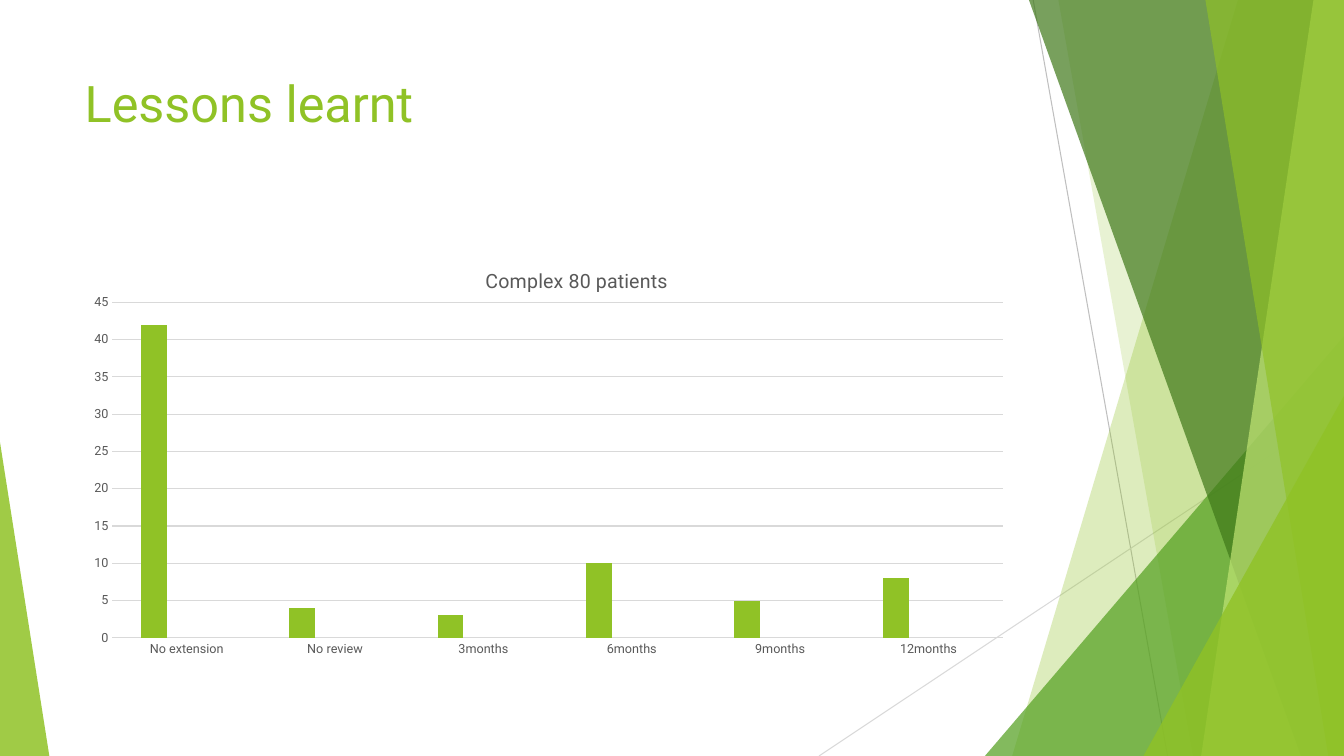
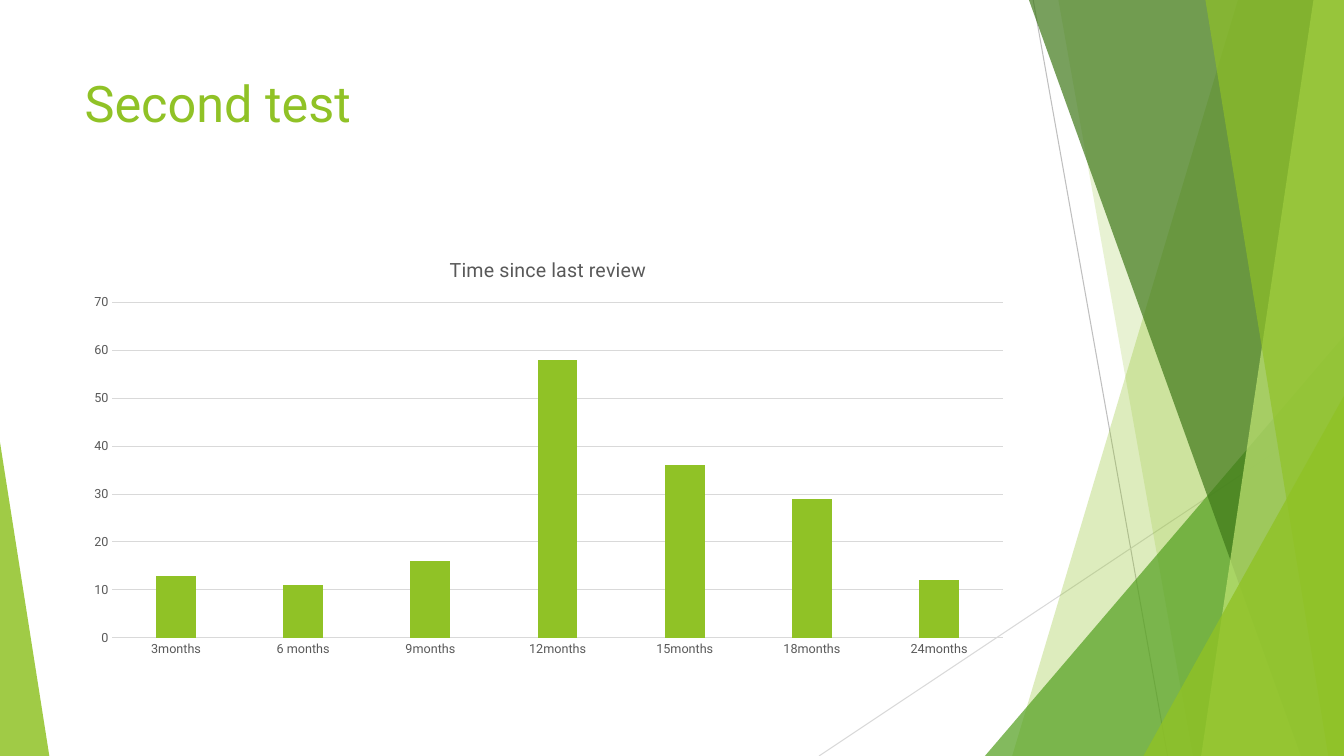
from lxml.etree import Element, SubElement
from pptx import Presentation
from pptx.chart.data import CategoryChartData
from pptx.dml.color import RGBColor
from pptx.enum.chart import XL_CHART_TYPE, XL_TICK_MARK
from pptx.enum.shapes import MSO_CONNECTOR, MSO_SHAPE
from pptx.enum.text import MSO_ANCHOR, PP_ALIGN
from pptx.oxml.ns import qn
from pptx.util import Pt

PX = 9525  # EMU in one px, 96 px to the inch
WIDTH, HEIGHT = 1280, 720
FONT = "Roboto"
COLORS = {
    "lime": "90C226",
    "green": "54A021",
    "forest": "3F7819",
    "pale": "C0E474",
    "gold": "E6B91E",
    "text": "595959",
    "grid": "D9D9D9",
    "thread": "BFBFBF",
}
SERIES_COLORS = ["lime", "green", "gold"]

TITLE_BOX = (71, 64, 902, 138)
CHART_BOX = (71, 227, 902, 407)
PLOT_AREA = {"x": 0.04, "y": 0.15, "w": 0.94, "h": 0.785}

# Thin lines: start x, start y, end x, end y, color
THREADS = [(984, 0, 1112, HEIGHT, "thread"), (WIDTH, 387, 780, HEIGHT, "grid")]
# Facets reach the right edge. Panel: top x, bottom x; wedge: left, top
FACETS = [
    ("panel", 1179, 964, "lime", 30),
    ("panel", 1008, 1136, "lime", 20),
    ("wedge", 938, 320, "green", 72),
    ("panel", 980, 1239, "forest", 70),
    ("panel", 1251, 1144, "pale", 70),
    ("panel", 1148, 1265, "lime", 65),
    ("wedge", 1089, 377, "lime", 80),
]


def rgb(name):
    return RGBColor.from_string(COLORS[name])


def emu(box):
    return [value * PX for value in box]


def style_font(font, size, color):
    font.name = FONT
    font.size = Pt(size)
    font.bold = False
    font.color.rgb = rgb(color)


def style_line(line, color):
    line.color.rgb = rgb(color)
    line.width = Pt(0.75)


def fill_facet(shape, color, opacity):
    shape.shadow.inherit = False
    shape.line.fill.background()
    shape.fill.solid()
    shape.fill.fore_color.rgb = rgb(color)
    color_element = shape.fill._xPr.find(qn("a:solidFill"))[0]
    SubElement(color_element, qn("a:alpha"), val=str(opacity * 1000))


def add_thread(slide, start_x, start_y, end_x, end_y, color):
    ends = emu((start_x, start_y, end_x, end_y))
    thread = slide.shapes.add_connector(MSO_CONNECTOR.STRAIGHT, *ends)
    style_line(thread.line, color)
    SubElement(thread._element.spPr, qn("a:effectLst"))


def add_panel(slide, top_x, bottom_x, color, opacity):
    builder = slide.shapes.build_freeform(top_x, 0, scale=PX)
    builder.add_line_segments([(WIDTH, 0), (WIDTH, HEIGHT), (bottom_x, HEIGHT)])
    fill_facet(builder.convert_to_shape(), color, opacity)


def add_wedge(slide, left, top, color, opacity, right=WIDTH, apex=1):
    box = emu((left, top, right - left, HEIGHT - top))
    wedge = slide.shapes.add_shape(MSO_SHAPE.ISOSCELES_TRIANGLE, *box)
    wedge.adjustments[0] = apex
    fill_facet(wedge, color, opacity)


def add_backdrop(slide):
    """Overlapping facets on the right and one wedge on the left."""
    for thread in THREADS:
        add_thread(slide, *thread)
    for kind, *facet in FACETS:
        add_facet = add_panel if kind == "panel" else add_wedge
        add_facet(slide, *facet)
    add_wedge(slide, 0, 421, "lime", 85, right=47, apex=0)


def add_title(slide, text, box):
    title = slide.shapes.title
    title.left, title.top, title.width, title.height = emu(box)
    text_frame = title.text_frame
    text_frame.text = text
    text_frame.vertical_anchor = MSO_ANCHOR.TOP
    paragraph = text_frame.paragraphs[0]
    paragraph.alignment = PP_ALIGN.LEFT
    style_font(paragraph.runs[0].font, 36, "lime")


def set_layout(element, index, fractions, inner=False):
    """Fix a chart part at fractions of the chart's size."""
    for old_layout in element.findall(qn("c:layout")):
        element.remove(old_layout)
    layout = Element(qn("c:layout"))
    manual = SubElement(layout, qn("c:manualLayout"))
    if inner:
        SubElement(manual, qn("c:layoutTarget"), val="inner")
    for key in ("x", "y"):
        SubElement(manual, qn(f"c:{key}Mode"), val="edge")
    for key, value in fractions.items():
        SubElement(manual, qn(f"c:{key}"), val=str(value))
    element.insert(index, layout)


def style_axes(chart, maximum, step):
    category_axis, value_axis = chart.category_axis, chart.value_axis
    for axis in (category_axis, value_axis):
        axis.major_tick_mark = axis.minor_tick_mark = XL_TICK_MARK.NONE
        style_font(axis.tick_labels.font, 9, "text")
    style_line(category_axis.format.line, "grid")
    value_axis.format.line.fill.background()
    value_axis.minimum_scale = 0
    value_axis.maximum_scale = maximum
    value_axis.major_unit = step
    value_axis.has_major_gridlines = True
    style_line(value_axis.major_gridlines.format.line, "grid")


def add_column_chart(slide, box, heading, categories, series, scale, heading_at):
    chart_data = CategoryChartData()
    chart_data.categories = categories
    for number, values in enumerate(series, 1):
        chart_data.add_series(f"Series {number}", values)
    chart = slide.shapes.add_chart(
        XL_CHART_TYPE.COLUMN_CLUSTERED, *emu(box), chart_data
    ).chart
    style_font(chart.font, 10, "text")
    chart.has_legend = False

    # Heading
    chart.has_title = True
    chart_title = chart.chart_title
    chart_title.text_frame.text = heading
    style_font(chart_title.text_frame.paragraphs[0].runs[0].font, 14, "text")
    chart_title.include_in_layout = False
    if heading_at:
        set_layout(chart_title._element, 1, heading_at)

    # Columns
    plot = chart.plots[0]
    plot.vary_by_categories = False
    plot.gap_width = 219
    plot.overlap = -27
    for column_series, color in zip(plot.series, SERIES_COLORS):
        column_series.invert_if_negative = False
        column_series.format.fill.solid()
        column_series.format.fill.fore_color.rgb = rgb(color)
    set_layout(chart._chartSpace.chart.plotArea, 0, PLOT_AREA, inner=True)
    style_axes(chart, *scale)


def add_chart_slide(presentation, title, heading, categories, series, scale,
                    heading_at=None):
    slide = presentation.slides.add_slide(presentation.slide_layouts[5])
    add_backdrop(slide)
    add_title(slide, title, TITLE_BOX)
    add_column_chart(slide, CHART_BOX, heading, categories, series, scale,
                     heading_at)


def main():
    presentation = Presentation()
    presentation.slide_width, presentation.slide_height = emu((WIDTH, HEIGHT))
    add_chart_slide(
        presentation, "Lessons learnt", "Complex 80 patients",
        ["No extension", "No review", "3months", "6months", "9months", "12months"],
        [[42, 4, 3, 10, 5, 8], [None] * 6, [None] * 6],
        scale=(45, 5), heading_at={"x": 0.43, "y": 0.06},
    )
    add_chart_slide(
        presentation, "Second test", "Time since last review",
        ["3months", "6 months", "9months", "12months", "15months", "18months",
         "24months"],
        [[13, 11, 16, 58, 36, 29, 12]],
        scale=(70, 10),
    )
    presentation.save("out.pptx")


if __name__ == "__main__":
    main()
